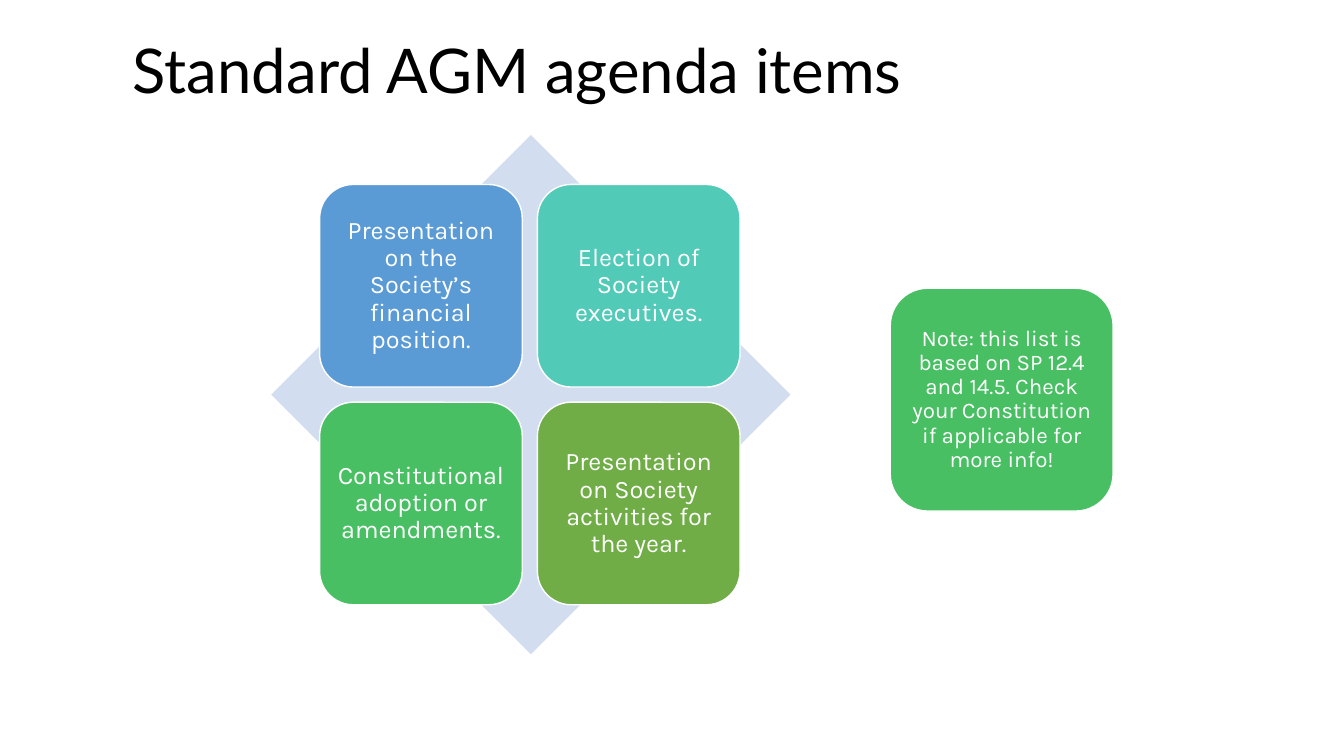
from pptx import Presentation
from pptx.dml.color import RGBColor
from pptx.enum.shapes import MSO_SHAPE as Shape
from pptx.enum.text import MSO_ANCHOR as Anchor, PP_ALIGN as Align
from pptx.util import Inches, Pt

COLORS = {
    "black": "000000",
    "white": "FFFFFF",
    "pale": "D2DEEF",
    "blue": "5B9BD5",
    "teal": "52CAB8",
    "green": "49BF64",
    "olive": "70AD47",
}

AGENDA = [
    ("Presentation on the Society’s financial position.", "blue"),
    ("Election of Society executives.", "teal"),
    ("Constitutional adoption or amendments.", "green"),
    ("Presentation on Society activities for the year.", "olive"),
]
NOTE = (
    "Note: this list is based on SP 12.4 and 14.5. "
    "Check your Constitution if applicable for more info!"
)


class AgendaSlide:
    title_font = "Lato"
    body_font = "Karla"
    card_inset = Inches(0.07)

    def __init__(self, presentation):
        self.slide = presentation.slides.add_slide(presentation.slide_layouts[6])

    def color(self, name):
        return RGBColor.from_string(COLORS[name])

    def set_text(self, shape, text, font, size, color, align):
        frame = shape.text_frame
        frame.word_wrap = True
        frame.vertical_anchor = Anchor.MIDDLE
        frame.text = text
        paragraph = frame.paragraphs[0]
        paragraph.alignment = align
        paragraph.line_spacing = 0.9
        run = paragraph.runs[0]
        run.font.name = font
        run.font.size = Pt(size)
        run.font.color.rgb = self.color(color)

    def title(self, text, left, top, width, height):
        box = self.slide.shapes.add_textbox(
            Inches(left), Inches(top), Inches(width), Inches(height)
        )
        self.set_text(box, text, self.title_font, 44, "black", Align.LEFT)

    def block(self, kind, left, top, side, fill):
        shape = self.slide.shapes.add_shape(
            kind, Inches(left), Inches(top), Inches(side), Inches(side)
        )
        shape.shadow.inherit = False
        shape.fill.solid()
        shape.fill.fore_color.rgb = self.color(fill)
        shape.line.fill.background()
        return shape

    def diamond(self, left, top, side):
        self.block(Shape.DIAMOND, left, top, side, "pale")

    def card(self, text, left, top, side, fill, size):
        shape = self.block(Shape.ROUNDED_RECTANGLE, left, top, side, fill)
        shape.line.color.rgb = self.color("white")
        shape.line.width = Pt(1)
        frame = shape.text_frame
        frame.margin_left = frame.margin_right = self.card_inset
        frame.margin_top = frame.margin_bottom = self.card_inset
        self.set_text(shape, text, self.body_font, size, "white", Align.CENTER)


def main():
    presentation = Presentation()
    presentation.slide_width = Inches(13.33)
    presentation.slide_height = Inches(7.5)

    agenda = AgendaSlide(presentation)
    agenda.title("Standard AGM agenda items", 1.22, 0, 10.9, 1.45)
    agenda.diamond(2.69, 1.34, 5.15)

    grid_left, grid_top, step = 3.17, 1.83, 2.16
    for index, (text, fill) in enumerate(AGENDA):
        row, column = divmod(index, 2)
        left = grid_left + column * step
        top = grid_top + row * step
        agenda.card(text, left, top, 2.01, fill, 18)

    agenda.card(NOTE, 8.83, 2.86, 2.21, "green", 16)
    presentation.save("out.pptx")


if __name__ == "__main__":
    main()
